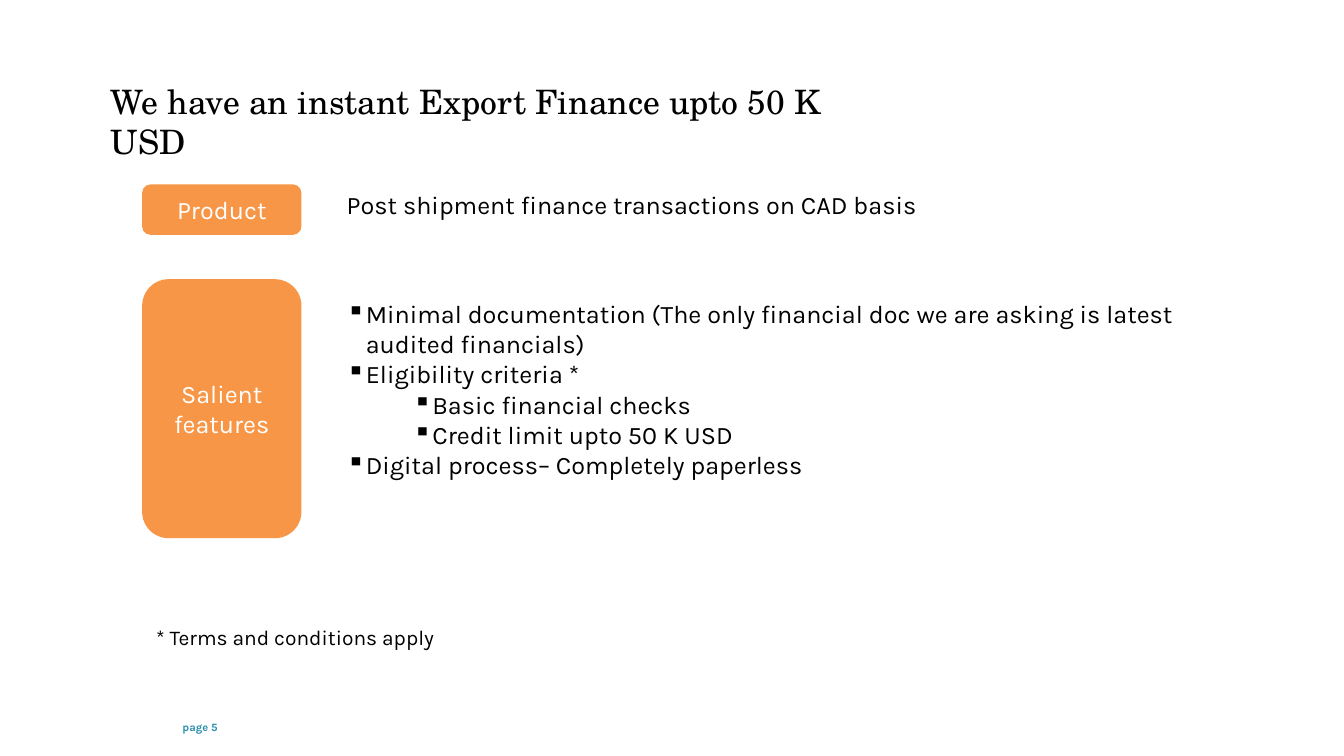
from lxml import etree
from pptx import Presentation
from pptx.dml.color import RGBColor
from pptx.enum.shapes import MSO_SHAPE as Shape
from pptx.enum.text import MSO_ANCHOR as Anchor, MSO_AUTO_SIZE as AutoSize, PP_ALIGN as Align
from pptx.oxml.ns import qn
from pptx.util import Inches, Pt

BODY_FONT = "Karla"
TITLE_FONT = "TeX Gyre Schola"
ORANGE, TEAL, BLACK, WHITE = "F79646", "2B8EAD", "000000", "FFFFFF"
HANGING = 0.19

FEATURES = [  # (level, text)
    (0, "Minimal documentation (The only financial doc we are asking is latest audited financials)"),
    (0, "Eligibility criteria *"),
    (1, "Basic financial checks"),
    (1, "Credit limit upto 50 K USD"),
    (0, "Digital process– Completely paperless"),
]


def color(value):
    return RGBColor.from_string(value)


def place(shape, left, top, width, height):
    shape.left, shape.top = Inches(left), Inches(top)
    shape.width, shape.height = Inches(width), Inches(height)


def write(para, text, size=18, font=BODY_FONT, fill=BLACK, bold=False, align=Align.LEFT):
    para.alignment = align
    span = para.add_run()
    span.text = text
    span.font.size = Pt(size)
    span.font.name = font
    span.font.bold = bold
    span.font.color.rgb = color(fill)


def add_bullet(para, level):
    para.level = level
    indent = 0.85 if level else HANGING
    properties = para._p.get_or_add_pPr()
    properties.set("marL", str(Inches(indent)))
    properties.set("indent", str(-Inches(HANGING)))
    etree.SubElement(properties, qn("a:buChar")).set("char", "▪")


def add_text(page, *bounds):
    box = page.shapes.add_textbox(*map(Inches, bounds))
    box.text_frame.word_wrap = True
    return box.text_frame


def add_label(page, text, top, height):
    label = page.shapes.add_shape(
        Shape.ROUNDED_RECTANGLE, Inches(1.41), Inches(top), Inches(1.58), Inches(height))
    label.shadow.inherit = False
    label.fill.solid()
    label.fill.fore_color.rgb = color(ORANGE)
    label.line.fill.background()
    frame = label.text_frame
    frame.word_wrap = True
    frame.vertical_anchor = Anchor.MIDDLE
    write(frame.paragraphs[0], text, fill=WHITE, align=Align.CENTER)


def add_features(page):
    frame = add_text(page, 3.34, 2.91, 8.5, 2.22)
    for index, (level, text) in enumerate(FEATURES):
        para = frame.add_paragraph() if index else frame.paragraphs[0]
        add_bullet(para, level)
        write(para, text)


def set_title(page, text):
    title = page.shapes.title
    place(title, 1, 0.75, 7.9, 0.5)
    frame = title.text_frame
    frame.word_wrap = True
    frame.auto_size = AutoSize.NONE
    frame.vertical_anchor = Anchor.TOP
    write(frame.paragraphs[0], text, size=24, font=TITLE_FONT)


def add_page_number(page, text):
    frame = add_text(page, 1.81, 7.05, 0.75, 0.33)
    frame.margin_left = frame.margin_right = frame.margin_top = frame.margin_bottom = 0
    frame.vertical_anchor = Anchor.MIDDLE
    write(frame.paragraphs[0], text, size=8, fill=TEAL, bold=True)


def main():
    deck = Presentation()
    deck.slide_width, deck.slide_height = Inches(13.33), Inches(7.5)
    page = deck.slides.add_slide(deck.slide_layouts[5])

    set_title(page, "We have an instant Export Finance upto 50 K USD")

    # Product row
    add_label(page, "Product", 1.83, 0.5)
    product = add_text(page, 3.34, 1.83, 7.75, 0.4)
    write(product.paragraphs[0], "Post shipment finance transactions on CAD basis")

    # Features row
    add_label(page, "Salient features", 2.77, 2.57)
    add_features(page)

    # Footnote and page number
    terms = add_text(page, 1.45, 6.15, 8.5, 0.35)
    write(terms.paragraphs[0], "* Terms and conditions apply", size=15)
    add_page_number(page, "page 5")

    deck.save("out.pptx")


if __name__ == "__main__":
    main()
